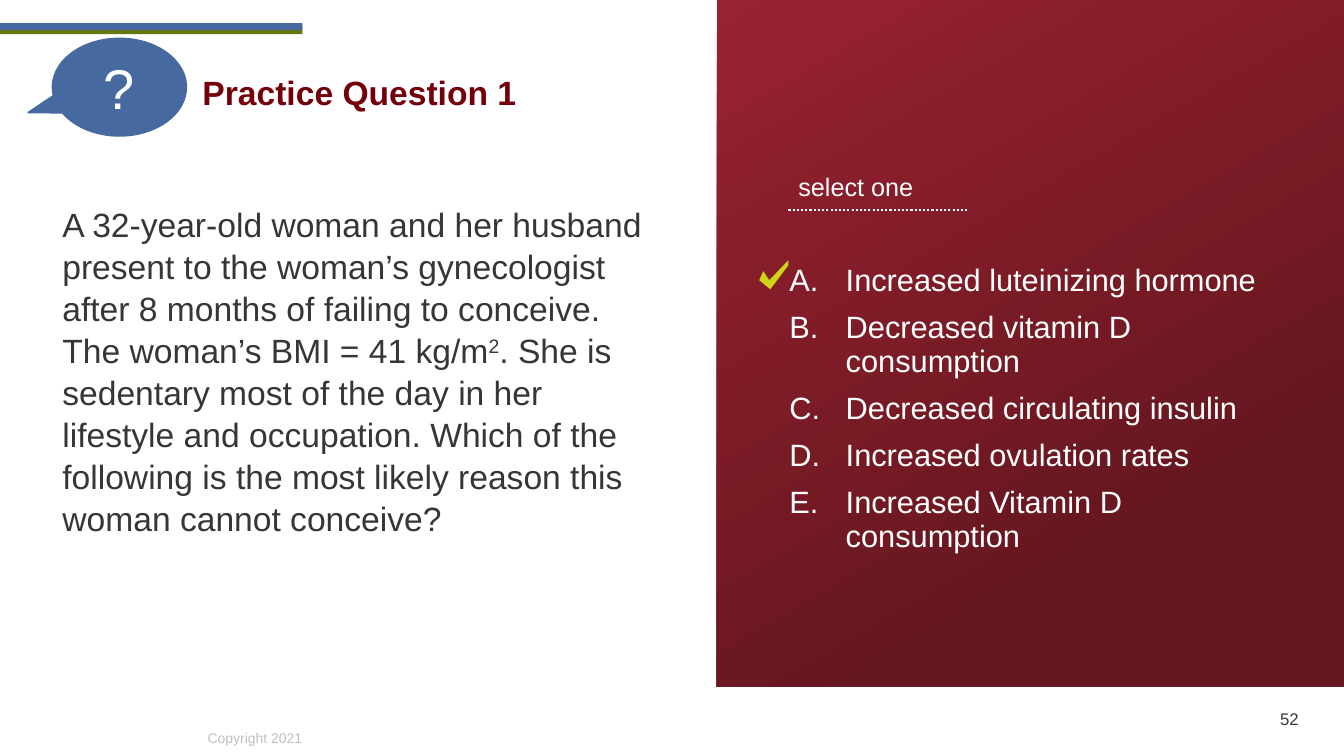
from lxml.etree import SubElement
from pptx import Presentation
from pptx.dml.color import RGBColor
from pptx.enum.dml import MSO_LINE
from pptx.enum.shapes import MSO_CONNECTOR, MSO_SHAPE
from pptx.enum.text import MSO_ANCHOR, PP_ALIGN
from pptx.oxml.ns import qn
from pptx.util import Emu, Pt

SCALE = 9144
COLORS = {
    "blue": "466A9F",
    "olive": "65780B",
    "dark": "661720",
    "red": "992230",
    "title": "73000A",
    "body": "363636",
    "page": "3B3B3B",
    "grey": "BFBFBF",
    "lime": "CED318",
    "white": "FFFFFF",
}
CHOICES = [
    "Increased luteinizing hormone",
    "Decreased vitamin D consumption",
    "Decreased circulating insulin",
    "Increased ovulation rates",
    "Increased Vitamin D consumption",
]
QUESTION = (
    "A 32-year-old woman and her husband present to the woman’s gynecologist "
    "after 8 months of failing to conceive. The woman’s BMI = 41 kg/m^2^. She is "
    "sedentary most of the day in her lifestyle and occupation. Which of the "
    "following is the most likely reason this woman cannot conceive?"
)
TICK = [(757, 269), (753, 278), (764, 287), (782, 263), (782, 258), (763, 278)]


def px(*sizes):
    return [Emu(size * SCALE) for size in sizes]


def color(name):
    return RGBColor.from_string(COLORS[name])


def write(frame, *lines, size, ink, bold=False, align=PP_ALIGN.LEFT,
          anchor=MSO_ANCHOR.TOP, wrap=True, space=None, gap=0, hang=0):
    frame.word_wrap = wrap
    frame.vertical_anchor = anchor
    for index, line in enumerate(lines):
        para = frame.add_paragraph() if index else frame.paragraphs[0]
        para.alignment = align
        if space:
            para.line_spacing = space
        if index:
            para.space_before = Pt(gap)
        if hang:
            props = para._p.get_or_add_pPr()
            props.set("marL", str(hang * SCALE))
            props.set("indent", str(-hang * SCALE))
            SubElement(props, qn("a:buFont"), typeface="+mj-lt")
            SubElement(props, qn("a:buAutoNum"), type="alphaUcPeriod")
        for part, words in enumerate(line.split("^")):
            run = para.add_run()
            run.text = words
            font = run.font
            font.name, font.size, font.bold = "Arial", Pt(size), bold
            font.color.rgb = color(ink)
            if part % 2:
                run._r.get_or_add_rPr().set("baseline", "30000")


class Board:
    def __init__(self, deck):
        self.shapes = deck.slides.add_slide(deck.slide_layouts[6]).shapes

    def paint(self, shape, fill):
        shape.shadow.inherit = False
        shape.fill.solid()
        shape.fill.fore_color.rgb = color(fill)
        shape.line.fill.background()
        return shape

    def shape(self, kind, box, fill):
        return self.paint(self.shapes.add_shape(kind, *px(*box)), fill)

    def panel(self, box, start, end):
        fill = self.shape(MSO_SHAPE.RECTANGLE, box, start).fill
        fill.gradient()
        fill.gradient_angle = 300
        for stop, name, place in zip(fill.gradient_stops, (start, end), (0, 0.74)):
            stop.color.rgb = color(name)
            stop.position = place

    def text(self, box, *lines, **style):
        write(self.shapes.add_textbox(*px(*box)).text_frame, *lines, **style)

    def bubble(self, box, mark, fill):
        shape = self.shape(MSO_SHAPE.OVAL_CALLOUT, box, fill)
        shape.adjustments[0], shape.adjustments[1] = -0.682, 0.26
        shape.line.color.rgb = color(fill)
        shape.line.width = Pt(1)
        write(shape.text_frame, mark, size=40, ink="white",
              align=PP_ALIGN.CENTER, anchor=MSO_ANCHOR.MIDDLE)

    def outline(self, points, fill):
        form = self.shapes.build_freeform(*points[0], scale=SCALE)
        form.add_line_segments(points[1:], close=True)
        self.paint(form.convert_to_shape(), fill)

    def dots(self, ends, ink):
        line = self.shapes.add_connector(MSO_CONNECTOR.STRAIGHT, *px(*ends))
        line.line.color.rgb = color(ink)
        line.line.width = Pt(1.5)
        line.line.dash_style = MSO_LINE.ROUND_DOT
        SubElement(line._element.spPr, qn("a:effectLst"))


def main():
    deck = Presentation()
    deck.slide_width, deck.slide_height = px(1333, 750)
    board = Board(deck)
    for top, fill in ((27, "olive"), (23, "blue")):
        board.shape(MSO_SHAPE.RECTANGLE, (0, top, 300, 7), fill)
    board.text((196, 719, 115, 27), "Copyright 2021", size=10, ink="grey", wrap=False)
    board.panel((711, 0, 622, 681), "red", "dark")
    board.text((52, 196, 615, 418), QUESTION, size=24, ink="body", space=1.04)
    board.text((773, 258, 508, 302), *CHOICES, size=22, ink="white",
               space=0.9, gap=10, hang=56)
    board.outline(TICK, "lime")
    board.bubble((52, 38, 133, 97), "?", "blue")
    board.text((191, 66, 507, 50), "Practice Question 1", size=24, ink="title", bold=True)
    board.text((782, 168, 139, 40), "select one", size=18, ink="white", space=0.9)
    board.dots((782, 208, 959, 208), "white")
    board.text((1209, 693, 89, 40), "52", size=12, ink="page",
               align=PP_ALIGN.RIGHT, anchor=MSO_ANCHOR.MIDDLE)
    deck.save("out.pptx")


if __name__ == "__main__":
    main()
